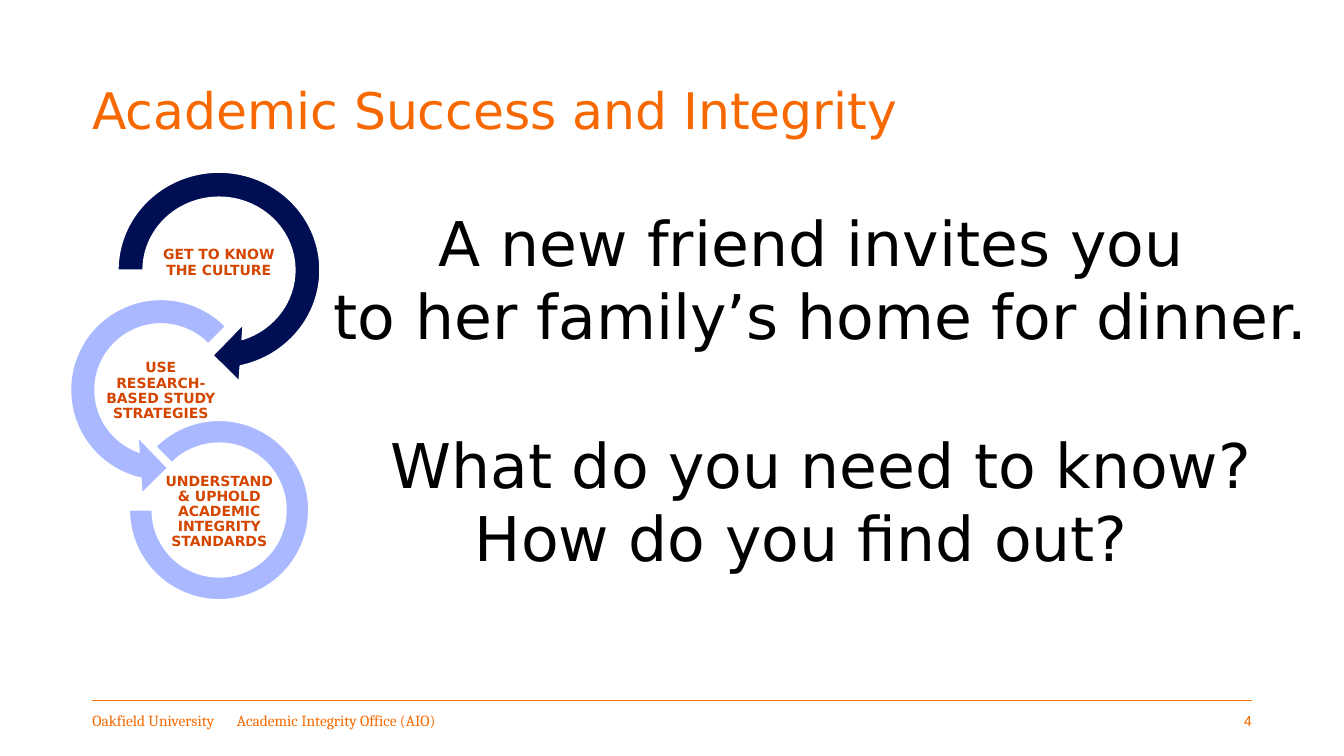
from dataclasses import dataclass
from typing import Optional

from lxml.etree import SubElement
from pptx import Presentation
from pptx.dml.color import RGBColor
from pptx.enum.shapes import MSO_CONNECTOR, MSO_SHAPE
from pptx.enum.text import MSO_ANCHOR, PP_ALIGN
from pptx.oxml.ns import qn
from pptx.util import Emu, Inches, Pt

ORANGE = RGBColor(0xF7, 0x69, 0x00)
DARK_ORANGE = RGBColor(0xD4, 0x45, 0x00)
NAVY = RGBColor(0x00, 0x0E, 0x54)
PERIWINKLE = RGBColor(0xAA, 0xB8, 0xFF)
BLACK = RGBColor(0x00, 0x00, 0x00)
WHITE = RGBColor(0xFF, 0xFF, 0xFF)

# The slide is a grid of 160 columns by 90 rows of square cells.
ROWS = 90
SLIDE_WIDTH, SLIDE_HEIGHT = Inches(13.333), Inches(7.5)
CELL = SLIDE_HEIGHT / ROWS

MARGIN, CONTENT_WIDTH = 11, 138
FOOTER_TOP, FOOTER_HEIGHT = 83.4, 4.8
BODY_FONT = "DejaVu Sans"


@dataclass(frozen=True)
class Area:
    """A block of grid cells."""
    column: float
    row: float
    columns: float
    rows: float

    def box(self) -> list[Emu]:
        return [cells(n) for n in (self.column, self.row, self.columns, self.rows)]


@dataclass(frozen=True)
class Style:
    font: str
    size: float
    color: RGBColor
    bold: bool = False
    align: PP_ALIGN = PP_ALIGN.LEFT
    spacing: float = 1.0


@dataclass(frozen=True)
class Line:
    text: str
    gap_before: float = 0
    right_margin: float = 0
    tab: float = 0


@dataclass(frozen=True)
class Step:
    label: str
    label_area: Area
    preset: MSO_SHAPE
    ring_area: Area
    adjustments: tuple[float, ...]
    fill: RGBColor
    outline: Optional[RGBColor] = None


TITLE = Style(BODY_FONT, 36, ORANGE, spacing=0.9)
LABEL = Style(BODY_FONT, 10, DARK_ORANGE, True, PP_ALIGN.CENTER, 0.9)
PROMPT = Style(BODY_FONT, 44, BLACK, align=PP_ALIGN.CENTER)
FOOTER = Style("Cambria", 11, ORANGE)
PAGE_NUMBER = Style("Roboto", 10, ORANGE, align=PP_ALIGN.RIGHT)

STEPS = [
    Step("GET TO KNOW THE CULTURE", Area(19.08, 24.36, 13.92, 13.92),
         MSO_SHAPE.CIRCULAR_ARROW, Area(12.15, 18.6, 27.84, 27.12),
         (0.11, 11.42, 45, 108, 0.125), NAVY, WHITE),
    Step("USE RESEARCH-BASED STUDY STRATEGIES", Area(12.24, 43.08, 13.8, 6.96),
         MSO_SHAPE.LEFT_CIRCULAR_ARROW, Area(6.75, 34, 24.84, 24.84),
         (0.11, 11.42, 63, 189, 0.125), PERIWINKLE),
    Step("UNDERSTAND & UPHOLD ACADEMIC INTEGRITY STANDARDS",
         Area(19.2, 57.48, 13.8, 6.96),
         MSO_SHAPE.BLOCK_ARC, Area(15.4, 50.04, 21.36, 21.36),
         (135, 108, 0.127), PERIWINKLE, WHITE),
]

PROMPT_LINES = [
    Line("A new friend invites you", right_margin=14),
    Line("to her family’s home for dinner."),
    Line("What do you need to know?", gap_before=53),
    Line("How do you find out?", right_margin=28),
]


def cells(count: float) -> Emu:
    return Emu(round(count * CELL))


def add_text(slide, area: Area, lines: list[Line], style: Style,
             side_inset: float = 0, end_inset: float = 0.05,
             anchor: MSO_ANCHOR = MSO_ANCHOR.MIDDLE) -> None:
    frame = slide.shapes.add_textbox(*area.box()).text_frame
    frame.word_wrap = True
    frame.vertical_anchor = anchor
    frame.margin_left = frame.margin_right = Inches(side_inset)
    frame.margin_top = frame.margin_bottom = Inches(end_inset)
    for index, line in enumerate(lines):
        paragraph = frame.add_paragraph() if index else frame.paragraphs[0]
        paragraph.text = line.text
        paragraph.alignment = style.align
        paragraph.line_spacing = style.spacing
        paragraph.space_before = Pt(line.gap_before)
        properties = paragraph._p.get_or_add_pPr()
        # Written even when zero, so that no margin carries over to the next line.
        properties.set("marR", str(Pt(line.right_margin)))
        if line.tab:
            stops = SubElement(properties, qn("a:tabLst"))
            SubElement(stops, qn("a:tab"), pos=str(cells(line.tab)), algn="l")
        font = paragraph.font
        font.name, font.size, font.bold = style.font, Pt(style.size), style.bold
        font.color.rgb = style.color


def add_step(slide, step: Step) -> None:
    ring = slide.shapes.add_shape(step.preset, *step.ring_area.box())
    ring.shadow.inherit = False
    for index, value in enumerate(step.adjustments):
        ring.adjustments[index] = value
    ring.fill.solid()
    ring.fill.fore_color.rgb = step.fill
    if step.outline is None:
        ring.line.fill.background()
    else:
        ring.line.color.rgb = step.outline
        ring.line.width = Pt(1)
    add_text(slide, step.label_area, [Line(step.label)], LABEL, 0.01, 0.01)


def add_footer(slide) -> None:
    top = cells(FOOTER_TOP)
    rule = slide.shapes.add_connector(
        MSO_CONNECTOR.STRAIGHT, cells(MARGIN), top, cells(MARGIN + CONTENT_WIDTH), top)
    rule.line.color.rgb = ORANGE
    rule.line.width = Pt(0.5)
    SubElement(rule._element.spPr, qn("a:effectLst"))
    add_text(slide, Area(MARGIN, FOOTER_TOP, 57.84, FOOTER_HEIGHT),
             [Line("Oakfield University\tAcademic Integrity Office (AIO)", tab=17.2)],
             FOOTER)
    add_text(slide, Area(123.8, FOOTER_TOP, 25.2, FOOTER_HEIGHT),
             [Line("4")], PAGE_NUMBER)


def main() -> None:
    presentation = Presentation()
    presentation.slide_width, presentation.slide_height = SLIDE_WIDTH, SLIDE_HEIGHT
    slide = presentation.slides.add_slide(presentation.slide_layouts[6])
    add_footer(slide)
    add_text(slide, Area(MARGIN, 4.8, CONTENT_WIDTH, 17.4),
             [Line("Academic Success and Integrity")], TITLE)
    for step in STEPS:
        add_step(slide, step)
    add_text(slide, Area(37.92, 23.76, 119.76, 45.6), PROMPT_LINES, PROMPT,
             side_inset=0.1, anchor=MSO_ANCHOR.TOP)
    presentation.save("out.pptx")


if __name__ == "__main__":
    main()
